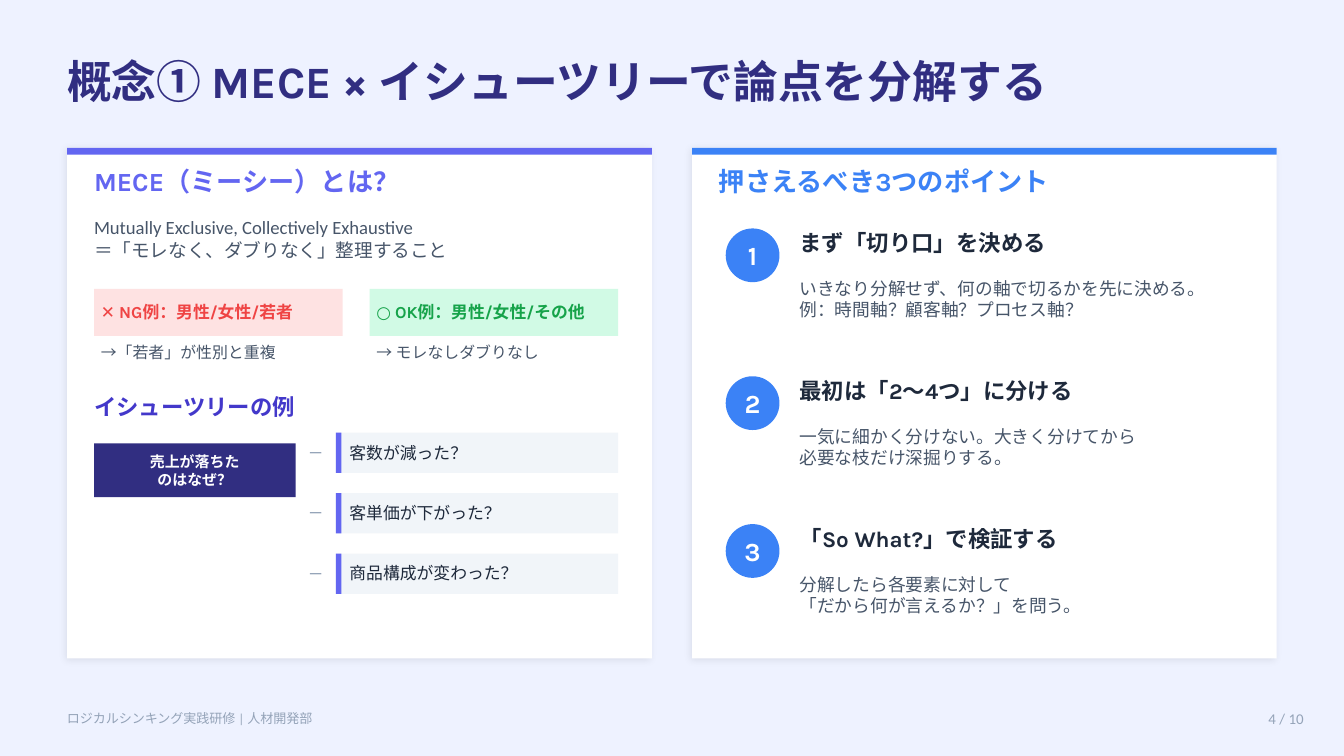
from dataclasses import dataclass

from lxml import etree
from pptx import Presentation
from pptx.dml.color import RGBColor
from pptx.enum import shapes, text
from pptx.oxml import ns
from pptx import util as u


@dataclass(frozen=True)
class Theme:
    background: str = "EEF2FF"
    white: str = "FFFFFF"
    navy: str = "312E81"
    indigo: str = "6366F1"
    violet: str = "4338CA"
    blue: str = "3B82F6"
    ink: str = "1E293B"
    slate: str = "475569"
    muted: str = "94A3B8"
    pale: str = "F1F5F9"
    red: str = "EF4444"
    red_pale: str = "FEE2E2"
    green: str = "16A34A"
    green_pale: str = "D1FAE5"
    heading_font: str = "Karla"
    body_font: str = "Calibri"
    title: float = 24
    heading: float = 14
    subheading: float = 12
    body: float = 10
    detail: float = 9.5
    label: float = 9
    note: float = 8.5
    small: float = 8
    footer: float = 7


T = Theme()


@dataclass(frozen=True)
class Box:
    left: float
    top: float
    width: float
    height: float


@dataclass(frozen=True)
class Style:
    size: float
    color: str
    bold: bool = False
    align: text.PP_ALIGN = text.PP_ALIGN.LEFT


@dataclass(frozen=True)
class Panel:
    left: float
    color: str
    heading: str


@dataclass(frozen=True)
class Example:
    left: float
    fill: str
    color: str
    label: str
    note: str


@dataclass(frozen=True)
class Point:
    heading: str
    detail: str


CENTER = text.PP_ALIGN.CENTER
RECT = shapes.MSO_SHAPE.RECTANGLE
OVAL = shapes.MSO_SHAPE.OVAL

PANELS = [
    Panel(0.5, T.indigo, "MECE（ミーシー）とは？"),
    Panel(5.15, T.blue, "押さえるべき3つのポイント"),
]
EXAMPLES = [
    Example(0.7, T.red_pale, T.red, "✕ NG例：男性/女性/若者", "→「若者」が性別と重複"),
    Example(2.75, T.green_pale, T.green, "○ OK例：男性/女性/その他", "→ モレなしダブりなし"),
]
BRANCHES = ["客数が減った？", "客単価が下がった？", "商品構成が変わった？"]
POINTS = [
    Point("まず「切り口」を決める",
          "いきなり分解せず、何の軸で切るかを先に決める。\n例：時間軸？顧客軸？プロセス軸？"),
    Point("最初は「2〜4つ」に分ける",
          "一気に細かく分けない。大きく分けてから\n必要な枝だけ深掘りする。"),
    Point("「So What?」で検証する",
          "分解したら各要素に対して\n「だから何が言えるか？」を問う。"),
]


def write(sp, content: str, style: Style, inset: float = 0) -> None:
    tf = sp.text_frame
    frame_format = {
        "word_wrap": True,
        "auto_size": text.MSO_AUTO_SIZE.NONE,
        "vertical_anchor": text.MSO_ANCHOR.MIDDLE,
        "margin_left": u.Inches(inset),
        "margin_right": u.Inches(inset),
        "margin_top": 0,
        "margin_bottom": 0,
    }
    for name, value in frame_format.items():
        setattr(tf, name, value)
    font_format = {
        "size": u.Pt(style.size),
        "bold": style.bold,
        "name": T.heading_font if style.bold else T.body_font,
    }
    for i, line in enumerate(content.split("\n")):
        p = tf.add_paragraph() if i else tf.paragraphs[0]
        p.alignment = style.align
        r = p.add_run()
        r.text = line
        for name, value in font_format.items():
            setattr(r.font, name, value)
        r.font.color.rgb = RGBColor.from_string(style.color)


def add_text(s, box: Box, content: str, style: Style, inset: float = 0) -> None:
    sp = s.shapes.add_textbox(*map(u.Inches, (box.left, box.top, box.width, box.height)))
    write(sp, content, style, inset)


def add_block(s, box: Box, fill: str, kind=RECT):
    sp = s.shapes.add_shape(kind, *map(u.Inches, (box.left, box.top, box.width, box.height)))
    sp.shadow.inherit = False
    sp.fill.solid()
    sp.fill.fore_color.rgb = RGBColor.from_string(fill)
    sp.line.fill.background()
    return sp


def add_soft_shadow(sp) -> None:
    effects = sp.element.spPr.find(ns.qn("a:effectLst"))
    shadow = etree.SubElement(effects, ns.qn("a:outerShdw"), blurRad=str(u.Pt(4)),
                              dist=str(u.Pt(1)), dir=str(135 * 60000),
                              algn="bl", rotWithShape="0")
    color = etree.SubElement(shadow, ns.qn("a:srgbClr"), val="000000")
    etree.SubElement(color, ns.qn("a:alpha"), val="8000")


def add_panel(s, panel: Panel) -> None:
    add_soft_shadow(add_block(s, Box(panel.left, 1.1, 4.35, 3.8), T.white))
    add_block(s, Box(panel.left, 1.1, 4.35, 0.05), panel.color)
    add_text(s, Box(panel.left + 0.2, 1.2, 3.8, 0.3), panel.heading,
             Style(T.heading, panel.color, True))


def add_example(s, example: Example) -> None:
    add_block(s, Box(example.left, 2.15, 1.85, 0.35), example.fill)
    add_text(s, Box(example.left + 0.05, 2.17, 1.75, 0.3), example.label,
             Style(T.label, example.color, True))
    add_text(s, Box(example.left + 0.05, 2.52, 1.75, 0.2), example.note,
             Style(T.note, T.slate))


def add_branch(s, top: float, question: str) -> None:
    add_text(s, Box(2.2, top - 0.02, 0.3, 0.3), "─",
             Style(T.subheading, T.muted, align=CENTER))
    add_block(s, Box(2.5, top, 2.1, 0.3), T.pale)
    add_block(s, Box(2.5, top, 0.04, 0.3), T.indigo)
    add_text(s, Box(2.6, top + 0.02, 1.9, 0.25), question, Style(T.label, T.ink))


def add_point(s, top: float, number: int, point: Point) -> None:
    sp = add_block(s, Box(5.4, top, 0.4, 0.4), T.blue, OVAL)
    write(sp, str(number), Style(T.heading, T.white, True, CENTER))
    add_text(s, Box(5.95, top - 0.02, 3.3, 0.25), point.heading,
             Style(T.subheading, T.ink, True))
    add_text(s, Box(5.95, top + 0.25, 3.3, 0.55), point.detail,
             Style(T.detail, T.slate))


def main() -> None:
    prs = Presentation()
    prs.slide_width = u.Inches(10)
    prs.slide_height = prs.slide_width * 9 // 16
    s = prs.slides.add_slide(prs.slide_layouts.get_by_name("Title Only"))
    s.background.fill.solid()
    s.background.fill.fore_color.rgb = RGBColor.from_string(T.background)

    title = s.shapes.title
    place = {"left": 0.5, "top": 0.3, "width": 9, "height": 0.6}
    for name, value in place.items():
        setattr(title, name, u.Inches(value))
    write(title, "概念① MECE × イシューツリーで論点を分解する",
          Style(T.title, T.navy, True))

    for panel in PANELS:
        add_panel(s, panel)

    add_text(s, Box(0.7, 1.55, 3.9, 0.45),
             "Mutually Exclusive, Collectively Exhaustive\n＝「モレなく、ダブりなく」整理すること",
             Style(T.body, T.slate))
    for example in EXAMPLES:
        add_example(s, example)

    add_text(s, Box(0.7, 2.9, 3.8, 0.25), "イシューツリーの例",
             Style(T.subheading, T.violet, True))
    root = add_block(s, Box(0.7, 3.3, 1.5, 0.4), T.navy)
    write(root, "売上が落ちた\nのはなぜ？", Style(T.small, T.white, True, CENTER))
    for i, question in enumerate(BRANCHES):
        add_branch(s, 3.22 + 0.45 * i, question)

    for i, point in enumerate(POINTS):
        add_point(s, 1.7 + 1.1 * i, i + 1, point)

    add_text(s, Box(9.1, 5.22, 0.7, 0.25), "4 / 10",
             Style(T.small, T.muted, align=text.PP_ALIGN.RIGHT), 0.1)
    add_text(s, Box(0.4, 5.22, 5, 0.25), "ロジカルシンキング実践研修 | 人材開発部",
             Style(T.footer, T.muted), 0.1)
    prs.save("out.pptx")


if __name__ == "__main__":
    main()
